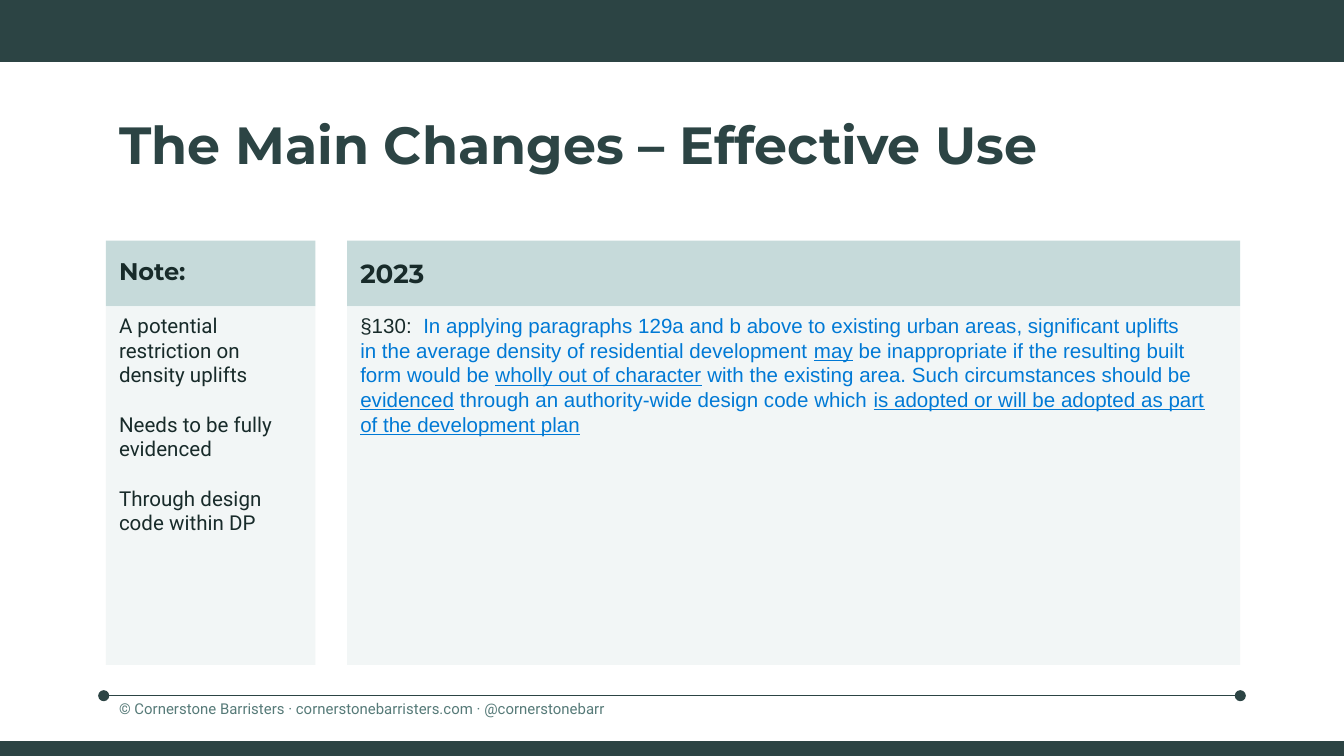
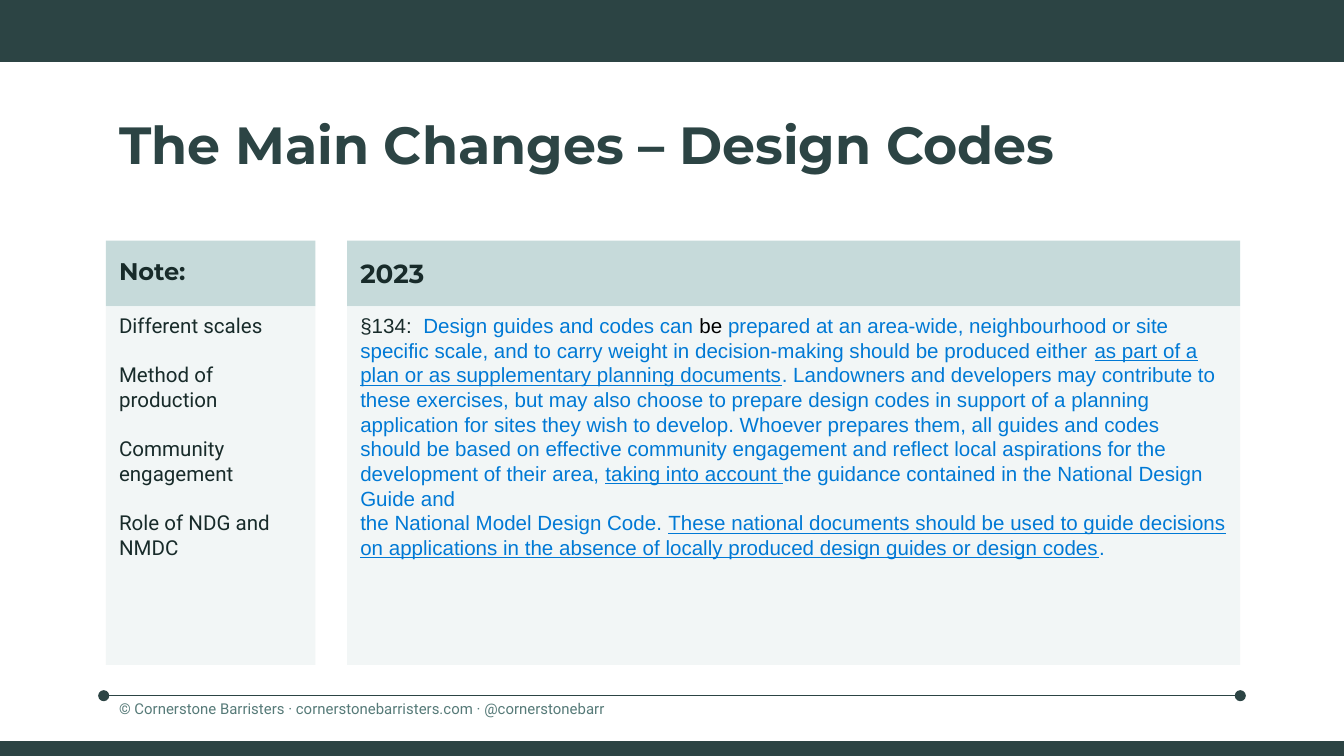
from dataclasses import dataclass
from typing import NamedTuple

from lxml.etree import SubElement
from pptx import Presentation
from pptx.dml.color import RGBColor
from pptx.enum.shapes import MSO_CONNECTOR as Connector
from pptx.enum.shapes import MSO_SHAPE as Shape
from pptx.enum.text import MSO_ANCHOR as Anchor
from pptx.enum.text import PP_ALIGN as Align
from pptx.oxml.ns import qn
from pptx.util import Cm, Pt

COLORS = {
    "dark": "2C4444",
    "footer": "567A78",
    "ink": "182B2A",
    "header": "C6DADA",
    "panel": "F2F6F6",
    "quote": "0079D5",
    "black": "000000",
}
SLIDE_WIDTH, SLIDE_HEIGHT = 25.4, 14.29
LEFT, RIGHT = 2.0, 23.44
HEADER_TOP, HEADER_HEIGHT = 4.55, 1.24
PANEL_TOP, PANEL_HEIGHT = HEADER_TOP + HEADER_HEIGHT, 6.78
NOTE_WIDTH, QUOTE_LEFT = 3.96, 6.56
FOOTER = "© Cornerstone Barristers · cornerstonebarristers.com · @cornerstonebarr"


class Box(NamedTuple):
    """Left, top, width and height in centimetres."""
    left: float
    top: float
    width: float
    height: float

    def lengths(self) -> list:
        return [Cm(value) for value in self]


class Style(NamedTuple):
    font: str
    size: float
    color: str
    bold: bool = False
    line_spacing: float | None = None
    space_before: float = 0


class Part(NamedTuple):
    """A stretch of quoted text."""
    text: str
    underline: bool = False
    color: str = "quote"


@dataclass
class ChangeSlide:
    title: str
    notes: list[str]
    quote: list[list[Part]]


TITLE = Style("Montserrat", 28, "dark", bold=True)
NOTE_HEADER = Style("Montserrat", 12.9, "ink", bold=True, line_spacing=0.8)
YEAR_HEADER = Style("Montserrat", 14, "ink", bold=True)
NOTE = Style("Roboto", 11, "ink", space_before=13.2)
QUOTE = Style("Arial", 11, "quote")
SMALL = Style("Roboto", 8, "footer")

SLIDES = [
    ChangeSlide(
        "The Main Changes – Effective Use",
        [
            "A potential restriction on density uplifts",
            "Needs to be fully evidenced",
            "Through design code within DP",
        ],
        [
            [
                Part("§130:", color="ink"),
                Part("  In applying paragraphs 129a and b above to existing urban areas, "
                     "significant uplifts"),
            ],
            [
                Part("in the average density of residential development "),
                Part("may", True),
                Part(" be inappropriate if the resulting built form would be "),
                Part("wholly out of character", True),
                Part(" with the existing area. Such circumstances should be "),
                Part("evidenced", True),
                Part(" through an authority-wide design code which "),
                Part("is adopted or will be adopted as part of the development plan", True),
            ],
        ],
    ),
    ChangeSlide(
        "The Main Changes – Design Codes",
        [
            "Different scales",
            "Method of production",
            "Community engagement",
            "Role of NDG and NMDC",
        ],
        [
            [
                Part("§134:  ", color="ink"),
                Part("Design guides and codes can "),
                Part("be ", color="black"),
                Part("prepared at an area-wide, neighbourhood or site specific scale, and to "
                     "carry weight in decision-making should be produced either "),
                Part("as part of a plan or as supplementary planning documents", True),
                Part(". Landowners and developers may contribute to these exercises, but may "
                     "also choose to prepare design codes in support of a planning application "
                     "for sites they wish to develop. Whoever prepares them, all guides and "
                     "codes should be based on effective community engagement and reflect "
                     "local aspirations for the development of their area, "),
                Part("taking into account ", True),
                Part("the guidance contained in the National Design Guide and"),
            ],
            [
                Part("the National Model Design Code. "),
                Part("These national documents should be used to guide decisions on "
                     "applications in the absence of locally produced design guides or "
                     "design codes", True),
                Part("."),
            ],
        ],
    ),
]


def rgb(name: str) -> RGBColor:
    return RGBColor.from_string(COLORS[name])


def add_rectangle(slide, box: Box, color: str):
    shape = slide.shapes.add_shape(Shape.RECTANGLE, *box.lengths())
    shape.shadow.inherit = False
    shape.fill.solid()
    shape.fill.fore_color.rgb = rgb(color)
    shape.line.fill.background()
    return shape


def write(shape, paragraphs: list[list[Part]], style: Style,
          anchor: Anchor = Anchor.TOP, inset: float = 0.13) -> None:
    """Fill a shape with paragraphs in one style; parts may differ in colour."""
    frame = shape.text_frame
    frame.word_wrap = True
    frame.vertical_anchor = anchor
    frame.margin_left = frame.margin_right = Cm(0.25)
    frame.margin_top = frame.margin_bottom = Cm(inset)
    for index, parts in enumerate(paragraphs):
        paragraph = frame.paragraphs[0] if index == 0 else frame.add_paragraph()
        paragraph.alignment = Align.LEFT
        if style.line_spacing:
            paragraph.line_spacing = style.line_spacing
        if index and style.space_before:
            paragraph.space_before = Pt(style.space_before)
        font = paragraph.font
        font.name, font.size, font.bold = style.font, Pt(style.size), style.bold
        font.color.rgb = rgb(style.color)
        for part in parts:
            run = paragraph.add_run()
            run.text = part.text
            if part.underline:
                run.font.underline = True
            if part.color != style.color:
                run.font.color.rgb = rgb(part.color)


def plain(style: Style, *texts: str) -> list[list[Part]]:
    """Give each text a paragraph of its own in the colour of the style."""
    return [[Part(text, color=style.color)] for text in texts]


def add_footer_line(slide) -> None:
    line = slide.shapes.add_connector(
        Connector.STRAIGHT, Cm(1.96), Cm(13.15), Cm(RIGHT), Cm(13.15))
    line.line.color.rgb = rgb("dark")
    line.line.width = Pt(0.75)
    outline = line.line._get_or_add_ln()
    for end in ("a:headEnd", "a:tailEnd"):
        SubElement(outline, qn(end), type="oval")
    SubElement(line._element.spPr, qn("a:effectLst"))


def add_frame(slide) -> None:
    """Draw the bands and the footer."""
    add_footer_line(slide)
    add_rectangle(slide, Box(0, 0, SLIDE_WIDTH, 1.17), "dark")
    add_rectangle(slide, Box(0, 14.01, SLIDE_WIDTH, 0.28), "dark")
    footer = slide.shapes.add_textbox(*Box(LEFT, 13.06, 12.57, 0.79).lengths())
    write(footer, plain(SMALL, FOOTER), SMALL, inset=0.25)


def add_column(slide, left: float, width: float, header: str, header_style: Style,
               body: list[list[Part]], body_style: Style) -> None:
    panel = add_rectangle(slide, Box(left, PANEL_TOP, width, PANEL_HEIGHT), "panel")
    write(panel, body, body_style)
    band = add_rectangle(slide, Box(left, HEADER_TOP, width, HEADER_HEIGHT), "header")
    write(band, plain(header_style, header), header_style, Anchor.MIDDLE)


def add_change_slide(presentation, content: ChangeSlide) -> None:
    slide = presentation.slides.add_slide(presentation.slide_layouts[6])
    add_frame(slide)
    title = slide.shapes.add_textbox(*Box(LEFT, 2.0, RIGHT - LEFT, 1.47).lengths())
    write(title, plain(TITLE, content.title), TITLE)
    add_column(slide, LEFT, NOTE_WIDTH, "Note:", NOTE_HEADER,
               plain(NOTE, *content.notes), NOTE)
    add_column(slide, QUOTE_LEFT, RIGHT - QUOTE_LEFT, "2023", YEAR_HEADER,
               content.quote, QUOTE)


def main() -> None:
    presentation = Presentation()
    presentation.slide_width = Cm(SLIDE_WIDTH)
    presentation.slide_height = Cm(SLIDE_HEIGHT)
    for content in SLIDES:
        add_change_slide(presentation, content)
    presentation.save("out.pptx")


if __name__ == "__main__":
    main()
